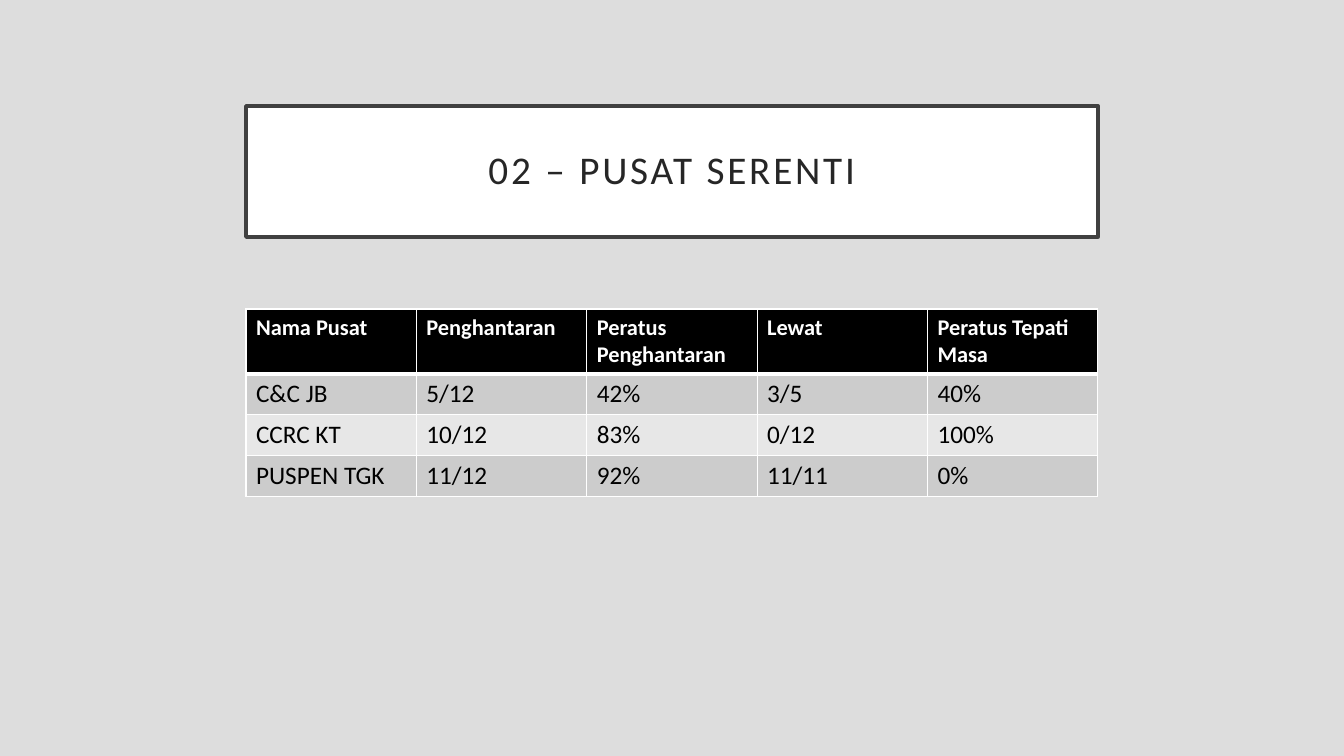
"""Build the Pusat Serenti delivery slide."""
from lxml import etree
from pptx import Presentation
from pptx.dml.color import RGBColor
from pptx.enum import text
from pptx.oxml import ns
from pptx.util import Emu, Pt

TITLE = "02 – PUSAT SERENTI"
ROWS = [
    ("Nama Pusat", "Penghantaran", "Peratus Penghantaran", "Lewat", "Peratus Tepati Masa"),
    ("C&C JB", "5/12", "42%", "3/5", "40%"),
    ("CCRC KT", "10/12", "83%", "0/12", "100%"),
    ("PUSPEN TGK", "11/12", "92%", "11/11", "0%"),
]
COLORS = {
    "background": "DDDDDD", "white": "FFFFFF", "frame": "404040", "title": "262626",
    "black": "000000", "odd": "CCCCCC", "even": "E7E7E7",
}
FONT = "Calibri"
SLIDE_W, SLIDE_H = 1344, 756
LEFT, WIDTH = 246, 852
TITLE_TOP, TITLE_H, TITLE_INSET = 106, 131, 20
TABLE_TOP, HEADER_H, ROW_H = 309, 64, 41


def px(n):
    return Emu(round(n * 914400 / 100.8))


def color(name):
    return RGBColor.from_string(COLORS[name])


def fill(target, name):
    target.fill.solid()
    target.fill.fore_color.rgb = color(name)


def style(p, size, name, bold=False):
    p.font.name, p.font.size, p.font.bold = FONT, Pt(size), bold
    p.font.color.rgb = color(name)


def add_border(cell, side, width):
    tc_pr = cell._tc.get_or_add_tcPr()
    ln = etree.SubElement(tc_pr, ns.qn(f"a:ln{side}"), w=str(Pt(width)))
    solid = etree.SubElement(ln, ns.qn("a:solidFill"))
    etree.SubElement(solid, ns.qn("a:srgbClr"), val=COLORS["white"])


def add_title(s):
    sp = s.shapes.title
    sp.left, sp.top, sp.width, sp.height = map(px, (LEFT, TITLE_TOP, WIDTH, TITLE_H))
    fill(sp, "white")
    sp.line.color.rgb = color("frame")
    sp.line.width = Pt(2.5)
    tf = sp.text_frame
    tf.text = TITLE
    tf.word_wrap = True
    tf.vertical_anchor = text.MSO_ANCHOR.MIDDLE
    tf.margin_left = tf.margin_right = tf.margin_top = tf.margin_bottom = px(TITLE_INSET)
    p = tf.paragraphs[0]
    p.alignment = text.PP_ALIGN.CENTER
    p.line_spacing = 0.9
    style(p, 28, "title")
    p.runs[0].font._element.set("spc", "200")


def add_table(s):
    height = HEADER_H + ROW_H * (len(ROWS) - 1)
    table = s.shapes.add_table(len(ROWS), len(ROWS[0]), px(LEFT), px(TABLE_TOP),
                               px(WIDTH), px(height)).table
    for i, row in enumerate(ROWS):
        header = i == 0
        table.rows[i].height = px(HEADER_H if header else ROW_H)
        for j, value in enumerate(row):
            cell = table.cell(i, j)
            cell.text = value
            for side, width in (("L", 1), ("R", 1), ("T", 3 if i == 1 else 1),
                                ("B", 3 if header else 1)):
                add_border(cell, side, width)
            fill(cell, "black" if header else "odd" if i % 2 else "even")
            style(cell.text_frame.paragraphs[0], 16 if header else 18,
                  "white" if header else "black", header)


def main():
    prs = Presentation()
    prs.slide_width, prs.slide_height = px(SLIDE_W), px(SLIDE_H)
    s = prs.slides.add_slide(prs.slide_layouts[5])
    fill(s.background, "background")
    add_title(s)
    add_table(s)
    prs.save("out.pptx")


if __name__ == "__main__":
    main()
